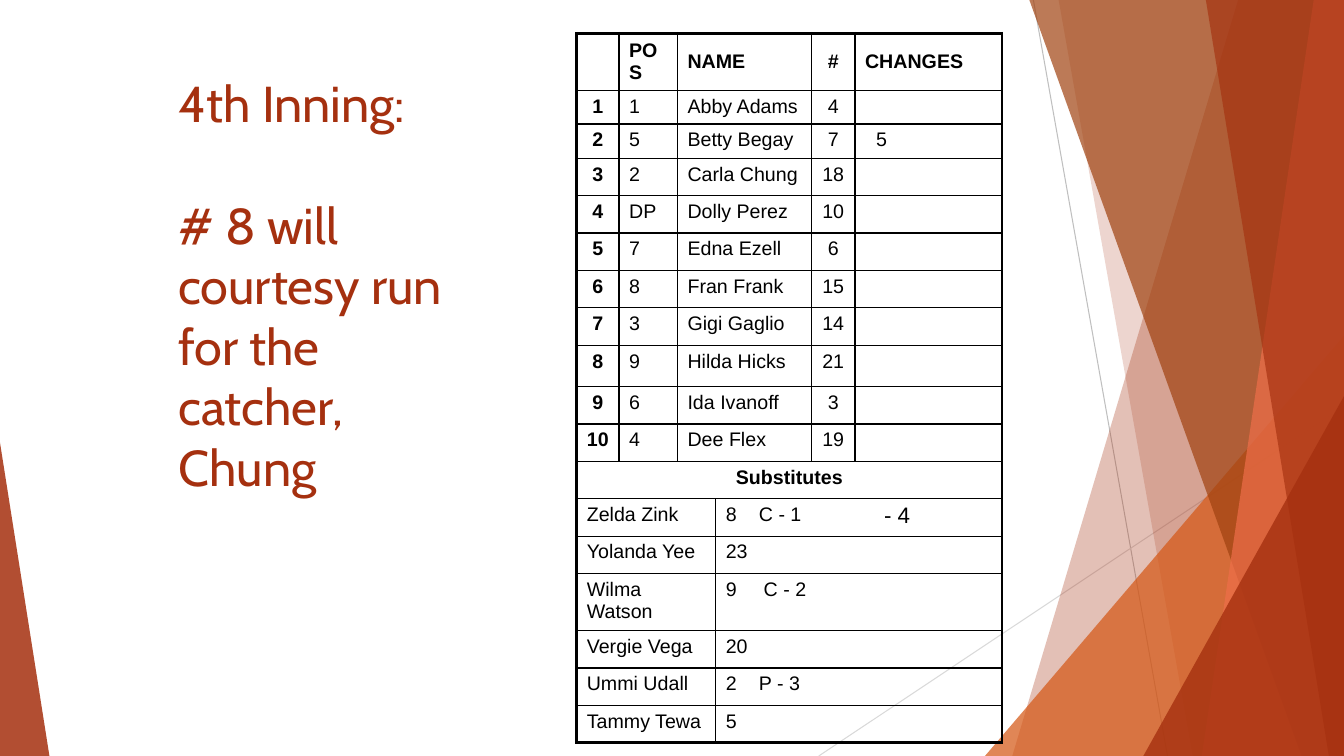
from dataclasses import dataclass

from lxml.etree import SubElement
from pptx import Presentation
from pptx.dml.color import RGBColor
from pptx.enum.shapes import MSO_CONNECTOR as Connector, MSO_SHAPE as Preset
from pptx.enum.text import MSO_ANCHOR as Anchor, PP_ALIGN as Align
from pptx.oxml.ns import qn
from pptx.util import Inches, Pt

WIDTH, HEIGHT = Inches(13.33), Inches(7.5)
RUST, ORANGE, BROWN, CORAL, BLACK = "A5300F", "D55816", "A04210", "EE6E4A", "000000"
THIN, THICK = 1, 2.25


# Lengths are percentages of the slide's width or height
def across(share: float) -> int:
    return round(WIDTH * share / 100)


def down(share: float) -> int:
    return round(HEIGHT * share / 100)


def colour(value: str) -> RGBColor:
    return RGBColor.from_string(value)


@dataclass
class Ray:
    start: tuple[float, float]
    end: tuple[float, float]
    colour: str


@dataclass
class Facet:
    """A full-height panel reaching from a slanted left edge to the right side."""
    top_left: float
    bottom_left: float
    colour: str
    opacity: int


@dataclass
class Wedge:
    """A right triangle standing on the bottom of the slide."""
    left: float
    top: float
    width: float
    apex: int
    colour: str
    opacity: int


@dataclass
class Entry:
    text: str = ""
    span: int = 1
    bold: bool = False
    centred: bool = False
    tab: float = 0
    indent: float = 0


@dataclass
class Row:
    height: float
    entries: list[Entry]


RAYS = [
    Ray((76.89, 0), (86.87, 100), "BFBFBF"),
    Ray((100, 53.73), (60.92, 100), "D9D9D9"),
]
PANELS = [
    Facet(92.12, 75.32, RUST, 30),
    Facet(78.77, 88.75, RUST, 20),
    Wedge(73.29, 44.4, 26.71, 1, ORANGE, 72),
    Facet(76.59, 96.85, BROWN, 70),
    Facet(97.75, 89.42, CORAL, 70),
    Facet(89.72, 98.87, RUST, 65),
    Wedge(85.07, 52.4, 14.93, 1, RUST, 80),
    Wedge(0, 58.53, 3.68, 0, RUST, 85),
]

COLUMNS = [3.15, 4.35, 2.85, 7.13, 3.23, 10.95]
ROW, TALL_ROW = 4.95, 7.47
ROW_HEIGHTS = {1: 4.4, 2: 4.53, 8: 5.47}
BATTERS = [
    ("1", "Abby Adams", "4"), ("5", "Betty Begay", "7"), ("2", "Carla Chung", "18"),
    ("DP", "Dolly Perez", "10"), ("7", "Edna Ezell", "6"), ("8", "Fran Frank", "15"),
    ("3", "Gigi Gaglio", "14"), ("9", "Hilda Hicks", "21"), ("6", "Ida Ivanoff", "3"),
    ("4", "Dee Flex", "19"),
]
CHANGES = {2: "5"}
SUBSTITUTES = [
    ("Zelda Zink", "8\tC - 1", 2.46, ROW), ("Yolanda Yee", "23", 0, ROW),
    ("Wilma Watson", "9\tC - 2", 2.82, TALL_ROW), ("Vergie Vega", "20", 0, ROW),
    ("Ummi Udall", "2\tP - 3", 2.46, ROW), ("Tammy Tewa", "5", 0, ROW),
]


def lineup_rows() -> list[Row]:
    rows = [Row(TALL_ROW, [Entry(), Entry("POS", bold=True), Entry("NAME", 2, True),
                           Entry("#", bold=True, centred=True), Entry("CHANGES", bold=True)])]
    for order, (position, name, number) in enumerate(BATTERS, 1):
        rows.append(Row(ROW_HEIGHTS.get(order, ROW), [
            Entry(str(order), bold=True, centred=True), Entry(position), Entry(name, 2),
            Entry(number, centred=True), Entry(CHANGES.get(order, ""), indent=0.83)]))
    rows.append(Row(ROW, [Entry("Substitutes", 6, True, True)]))
    for name, record, tab, height in SUBSTITUTES:
        rows.append(Row(height, [Entry(name, 3), Entry(record, 3, tab=tab)]))
    return rows


def style_runs(paragraph, font: str, size: float, value: str, bold: bool = False) -> None:
    for run in paragraph.runs:
        run.font.name, run.font.size, run.font.bold = font, Pt(size), bold
        run.font.color.rgb = colour(value)


def draw_ray(slide, ray: Ray) -> None:
    (x1, y1), (x2, y2) = ray.start, ray.end
    line = slide.shapes.add_connector(Connector.STRAIGHT, across(x1), down(y1), across(x2), down(y2))
    line.line.color.rgb, line.line.width = colour(ray.colour), Pt(0.75)
    SubElement(line._element.spPr, qn("a:effectLst"))


def draw_panel(slide, panel: Facet | Wedge) -> None:
    if isinstance(panel, Wedge):
        shape = slide.shapes.add_shape(Preset.ISOSCELES_TRIANGLE, across(panel.left), down(panel.top),
                                       across(panel.width), down(100 - panel.top))
        shape.adjustments[0] = panel.apex
    else:
        outline = slide.shapes.build_freeform(across(panel.top_left), 0)
        outline.add_line_segments([(WIDTH, 0), (WIDTH, HEIGHT), (across(panel.bottom_left), HEIGHT)])
        shape = outline.convert_to_shape()
    shape.shadow.inherit = False
    shape.line.fill.background()
    shape.fill.solid()
    shape.fill.fore_color.rgb = colour(panel.colour)
    tint = shape._element.spPr.find(qn("a:solidFill"))[0]
    SubElement(tint, qn("a:alpha"), val=str(panel.opacity * 1000))


def draw_text(slide, text: str, box: tuple[float, float, float, float],
              font: str, size: float, value: str):
    left, top, width, height = box
    shape = slide.shapes.add_textbox(across(left), down(top), across(width), down(height))
    text_frame = shape.text_frame
    text_frame.word_wrap = True
    text_frame.text = text
    for paragraph in text_frame.paragraphs:
        style_runs(paragraph, font, size, value)
    return text_frame


def draw_borders(cell, widths: dict[str, float]) -> None:
    properties = cell._tc.get_or_add_tcPr()
    for side, width in widths.items():
        line = SubElement(properties, qn(f"a:ln{side}"), w=str(Pt(width)))
        SubElement(SubElement(line, qn("a:solidFill")), qn("a:srgbClr"), val=BLACK)
    cell.fill.background()


def fill_cell(cell, entry: Entry) -> None:
    cell.text_frame.text = entry.text
    paragraph = cell.text_frame.paragraphs[0]
    paragraph.alignment = Align.CENTER if entry.centred else Align.LEFT
    style_runs(paragraph, "Arial", 14, BLACK, entry.bold)
    properties = paragraph._p.get_or_add_pPr()
    if entry.indent:
        properties.set("marL", str(across(entry.indent)))
    if entry.tab:
        SubElement(SubElement(properties, qn("a:tabLst")), qn("a:tab"),
                   pos=str(across(entry.tab)), algn="l")
    SubElement(paragraph._p, qn("a:endParaRPr"), sz="1400")


def draw_lineup(slide, rows: list[Row]) -> None:
    frame = slide.shapes.add_table(len(rows), len(COLUMNS), across(42.91), down(4.4),
                                   across(sum(COLUMNS)), down(sum(row.height for row in rows)))
    table = frame.table
    table.first_row = table.horz_banding = False
    for column, width in zip(table.columns, COLUMNS):
        column.width = across(width)
    last_row, last_column = len(rows) - 1, len(COLUMNS) - 1
    for i, row in enumerate(rows):
        table.rows[i].height = down(row.height)
        start = 0
        for entry in row.entries:
            end = start + entry.span - 1
            if entry.span > 1:
                table.cell(i, start).merge(table.cell(i, end))
            for j in range(start, end + 1):
                cell = table.cell(i, j)
                fill_cell(cell, entry if j == start else Entry())
                cell.vertical_anchor = Anchor.MIDDLE if i == 0 else Anchor.TOP
                draw_borders(cell, {"L": THICK if start == 0 else THIN,
                                    "R": THICK if end == last_column else THIN,
                                    "T": THICK if i == 0 else THIN,
                                    "B": THICK if i == last_row else THIN})
            start = end + 1


def main() -> None:
    presentation = Presentation()
    presentation.slide_width, presentation.slide_height = WIDTH, HEIGHT
    slide = presentation.slides.add_slide(presentation.slide_layouts[6])
    # Backdrop
    for ray in RAYS:
        draw_ray(slide, ray)
    for panel in PANELS:
        draw_panel(slide, panel)
    # Title
    title = draw_text(slide, "4th Inning:\n# 8 will courtesy run for the catcher, Chung",
                      (12.53, 8.93, 23.18, 78.93), "Cabin", 36, RUST)
    title.paragraphs[1].space_before = Pt(43.5)
    # Lineup card and the re-entry note on it
    draw_lineup(slide, lineup_rows())
    draw_text(slide, "- 4", (65.04, 65.6, 6.08, 4.93), "Arial", 16, BLACK)
    presentation.save("out.pptx")


if __name__ == "__main__":
    main()
